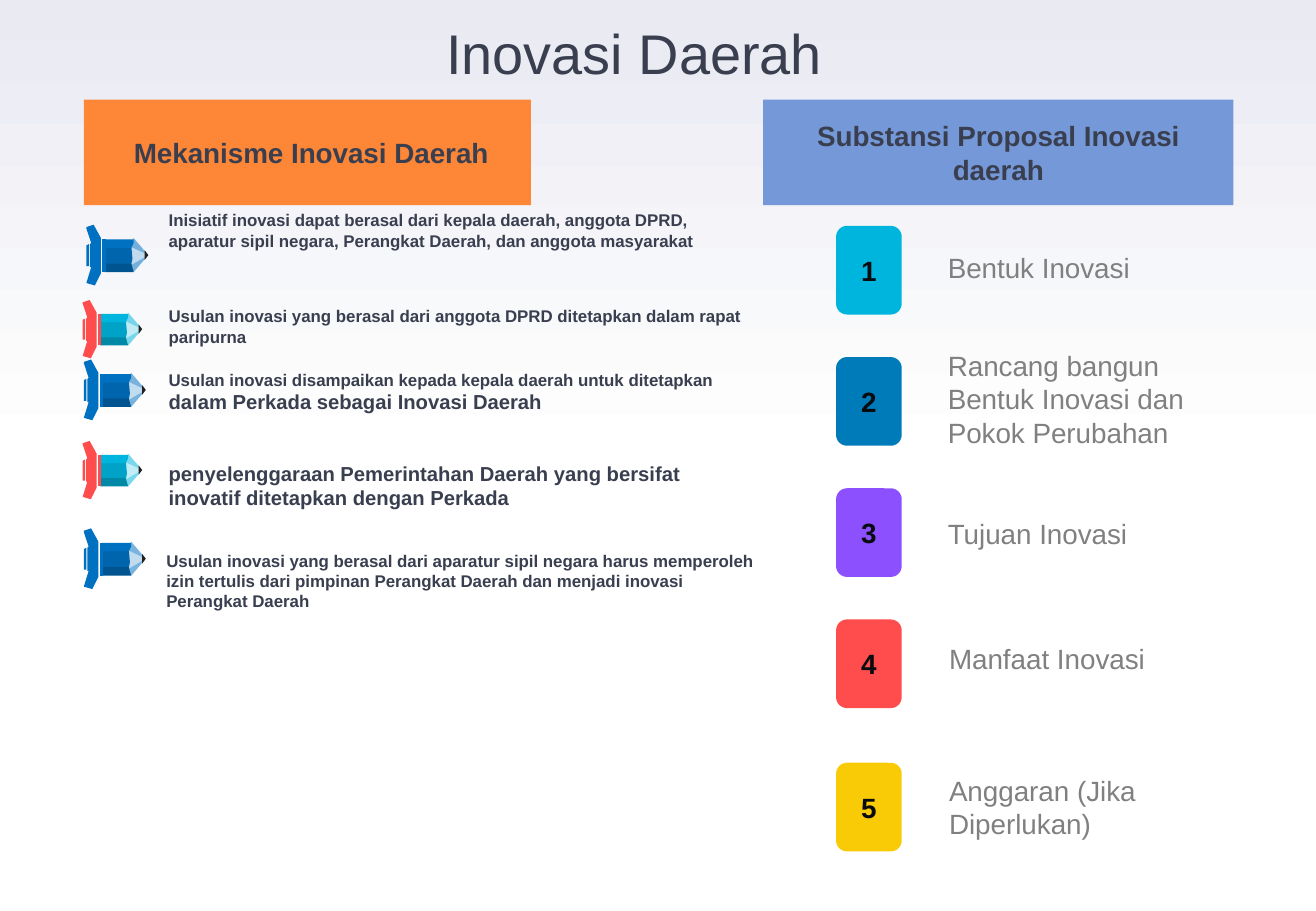
from lxml import etree
from pptx import Presentation
from pptx.dml.color import RGBColor
from pptx.enum.shapes import MSO_SHAPE
from pptx.enum.text import MSO_ANCHOR, MSO_AUTO_SIZE, PP_ALIGN
from pptx.oxml.ns import qn
from pptx.util import Inches, Pt

RECTANGLE, ROUNDED = MSO_SHAPE.RECTANGLE, MSO_SHAPE.ROUNDED_RECTANGLE
TOP, MIDDLE = MSO_ANCHOR.TOP, MSO_ANCHOR.MIDDLE
LEFT, CENTER = PP_ALIGN.LEFT, PP_ALIGN.CENTER
FIXED = MSO_AUTO_SIZE.NONE

WIDTH, HEIGHT = Inches(10.83), Inches(7.5)
COLUMN, ROW = WIDTH / 100, HEIGHT / 100
FONT = "Arial"
TITLE_ONLY = 5

WHITE = RGBColor(0xFF, 0xFF, 0xFF)
MIST = RGBColor(0xE9, 0xEA, 0xF2)
SLATE = RGBColor(0x3A, 0x3F, 0x50)
INK = RGBColor(0x09, 0x0C, 0x0F)
GRAY = RGBColor(0x80, 0x80, 0x80)
LEAD = RGBColor(0x23, 0x1F, 0x20)
ORANGE = RGBColor(0xFE, 0x86, 0x37)
PERIWINKLE = RGBColor(0x75, 0x98, 0xD9)
CYAN = RGBColor(0x00, 0xB5, 0xDD)
CYAN_MID = RGBColor(0x00, 0xA3, 0xC7)
CYAN_DARK = RGBColor(0x00, 0x88, 0xA6)
OCEAN = RGBColor(0x00, 0x7B, 0xB9)
VIOLET = RGBColor(0x8C, 0x50, 0xFF)
RED = RGBColor(0xFF, 0x4D, 0x4D)
YELLOW = RGBColor(0xF9, 0xCB, 0x07)
BLUE = RGBColor(0x00, 0x70, 0xC0)
BLUE_MID = RGBColor(0x00, 0x65, 0xAD)
BLUE_DARK = RGBColor(0x00, 0x54, 0x90)

BLUE_PENCIL = {"trim": BLUE, "light": BLUE, "middle": BLUE_MID,
               "dark": BLUE_DARK, "shine": WHITE, "lead": LEAD}
CYAN_PENCIL = {"trim": RED, "light": CYAN, "middle": CYAN_MID,
               "dark": CYAN_DARK, "shine": WHITE, "lead": LEAD}

PENCIL_PARTS = [
    ("trim", 100, [(2, 16), (2, 34), (0, 34), (0, 17)]),
    ("trim", 100, [(12, 11), (12, 40), (7, 50), (0, 48), (4, 35), (3, 35),
                   (3, 16), (4, 15), (0, 3), (0, 2), (6, 0)]),
    ("light", 52, [(39, 11), (51, 25), (39, 39), (35, 32), (34, 25), (35, 18)]),
    ("shine", 54, [(36, 18), (51, 25), (37, 33), (36, 25)]),
    ("middle", 100, [(15, 17), (37, 17), (38, 28), (37, 33), (15, 33)]),
    ("light", 100, [(15, 12), (39, 12), (39, 15), (37, 19), (15, 19)]),
    ("dark", 100, [(15, 32), (37, 32), (39, 39), (15, 39)]),
    ("trim", 100, [(13, 39), (13, 12), (16, 12), (16, 39)]),
    ("lead", 100, [(48, 21), (51, 25), (48, 29)]),
]

PENCILS = [
    (6.56, 24.67, 1, BLUE_PENCIL),
    (6.28, 32.93, 0.96, CYAN_PENCIL),
    (6.37, 39.47, 1, BLUE_PENCIL),
    (6.28, 48.4, 0.96, CYAN_PENCIL),
    (6.37, 58, 1, BLUE_PENCIL),
]

MECHANISMS = [
    (11.91, 22.4, 10.4, [("Inisiatif inovasi dapat berasal dari kepala daerah, anggota DPRD, "
                          "aparatur sipil negara, Perangkat Daerah, dan anggota masyarakat", 10)]),
    (11.91, 32.93, 5.87, [("Usulan inovasi yang berasal dari anggota DPRD ditetapkan "
                           "dalam rapat paripurna", 10)]),
    (11.91, 39.87, 9.07, [("Usulan inovasi disampaikan kepada kepala daerah untuk ditetapkan ", 10),
                          ("dalam Perkada sebagai Inovasi Daerah", 12)]),
    (11.91, 50, 9.47, [("penyelenggaraan Pemerintahan Daerah yang bersifat inovatif "
                        "ditetapkan dengan Perkada", 12)]),
    (11.73, 59.73, 10.4, [("Usulan inovasi yang berasal dari aparatur sipil negara harus "
                           "memperoleh izin tertulis dari pimpinan Perangkat Daerah dan "
                           "menjadi inovasi Perangkat Daerah", 10)]),
]

PROPOSAL_ITEMS = [
    (24.8, CYAN, 71.19, 26.67, 5.07, "Bentuk Inovasi"),
    (39.2, OCEAN, 71.19, 37.47, 12.53, "Rancang bangun Bentuk Inovasi dan Pokok Perubahan"),
    (53.6, VIOLET, 71.19, 55.87, 5.07, "Tujuan Inovasi"),
    (68, RED, 71.28, 69.6, 5.07, "Manfaat Inovasi"),
    (83.73, YELLOW, 71.28, 84.13, 8.8, "Anggaran (Jika Diperlukan)"),
]


def grid(left, top, width, height):
    """Turn columns and rows into slide lengths."""
    return round(left * COLUMN), round(top * ROW), round(width * COLUMN), round(height * ROW)


def write(shape, spans, color, bold=False, align=LEFT, anchor=TOP, insets=(0.1, 0.05, 0.1, 0.05)):
    """Fill a shape with one paragraph of (text, size) spans and return it."""
    frame = shape.text_frame
    frame.word_wrap, frame.auto_size, frame.vertical_anchor = True, FIXED, anchor
    frame.margin_left, frame.margin_top, frame.margin_right, frame.margin_bottom = map(Inches, insets)
    para = frame.paragraphs[0]
    para.alignment = align
    for text, size in spans:
        span = para.add_run()
        span.text = text
        span.font.name, span.font.size, span.font.bold = FONT, Pt(size), bold
        span.font.color.rgb = color
    return para


def paint(shape, color, opacity=100):
    """Give a shape a plain fill without outline or shadow."""
    shape.shadow.inherit = False
    shape.fill.solid()
    shape.fill.fore_color.rgb = color
    shape.line.fill.background()
    if opacity < 100:
        tint = shape.element.spPr.find(qn("a:solidFill"))[0]
        etree.SubElement(tint, qn("a:alpha"), val=str(opacity * 1000))


def add_background(page):
    """Shade the page from white up to a pale mist at the top."""
    fill = page.background.fill
    fill.gradient()
    fill.gradient_angle = 90
    for stop, position, color in zip(fill.gradient_stops, (0.5, 1), (WHITE, MIST)):
        stop.position = position
        stop.color.rgb = color


def add_title(page, text):
    """Place the slide title."""
    title = page.shapes.title
    title.left, title.top, title.width, title.height = grid(8.59, 2.27, 79.22, 8.27)
    para = write(title, [(text, 33.1)], SLATE, align=CENTER, insets=(0.14, 0.05, 0.14, 0.07))
    para.line_spacing = 0.89


def add_panel(page, kind, place, color, text, ink, indent=0.1):
    """Add a filled shape with a bold centred caption."""
    panel = page.shapes.add_shape(kind, *grid(*place))
    paint(panel, color)
    write(panel, [(text, 16.5)], ink, True, CENTER, MIDDLE, (indent, 0.05, 0.1, 0.05))


def add_text(page, place, spans, color, bold=False, insets=(0.1, 0.05, 0.1, 0.05)):
    """Add a wrapped text box."""
    box = page.shapes.add_textbox(*grid(*place))
    write(box, spans, color, bold, insets=insets)


def add_pencil(page, left, top, size, colors):
    """Draw a pencil bullet as a group of outlines."""
    pencil = page.shapes.add_group_shape()
    for role, opacity, points in PENCIL_PARTS:
        outline = pencil.shapes.build_freeform(*points[0], scale=WIDTH / 1083 * size)
        outline.add_line_segments(points[1:], close=True)
        part = outline.convert_to_shape(round(left * COLUMN), round(top * ROW))
        paint(part, colors[role], opacity)


def main():
    """Build and save the slide."""
    deck = Presentation()
    deck.slide_width, deck.slide_height = WIDTH, HEIGHT
    page = deck.slides.add_slide(deck.slide_layouts[TITLE_ONLY])
    add_background(page)
    add_title(page, "Inovasi Daerah")
    for number, (top, color, left, text_top, height, text) in enumerate(PROPOSAL_ITEMS, 1):
        add_panel(page, ROUNDED, (63.53, top, 4.99, 9.73), color, str(number), INK)
        add_text(page, (left, text_top, 19.94, height), [(text, 16.5)], GRAY,
                 insets=(0.09, 0.06, 0.09, 0.06))
    add_panel(page, RECTANGLE, (57.99, 10.93, 35.73, 11.6), PERIWINKLE,
              "Substansi Proposal Inovasi daerah", SLATE)
    add_panel(page, RECTANGLE, (6.37, 10.93, 33.98, 11.6), ORANGE,
              "Mekanisme Inovasi Daerah", SLATE, 0.16)
    for pencil in PENCILS:
        add_pencil(page, *pencil)
    for left, top, height, spans in MECHANISMS:
        add_text(page, (left, top, 46.54, height), spans, SLATE, True)
    deck.save("out.pptx")


if __name__ == "__main__":
    main()
